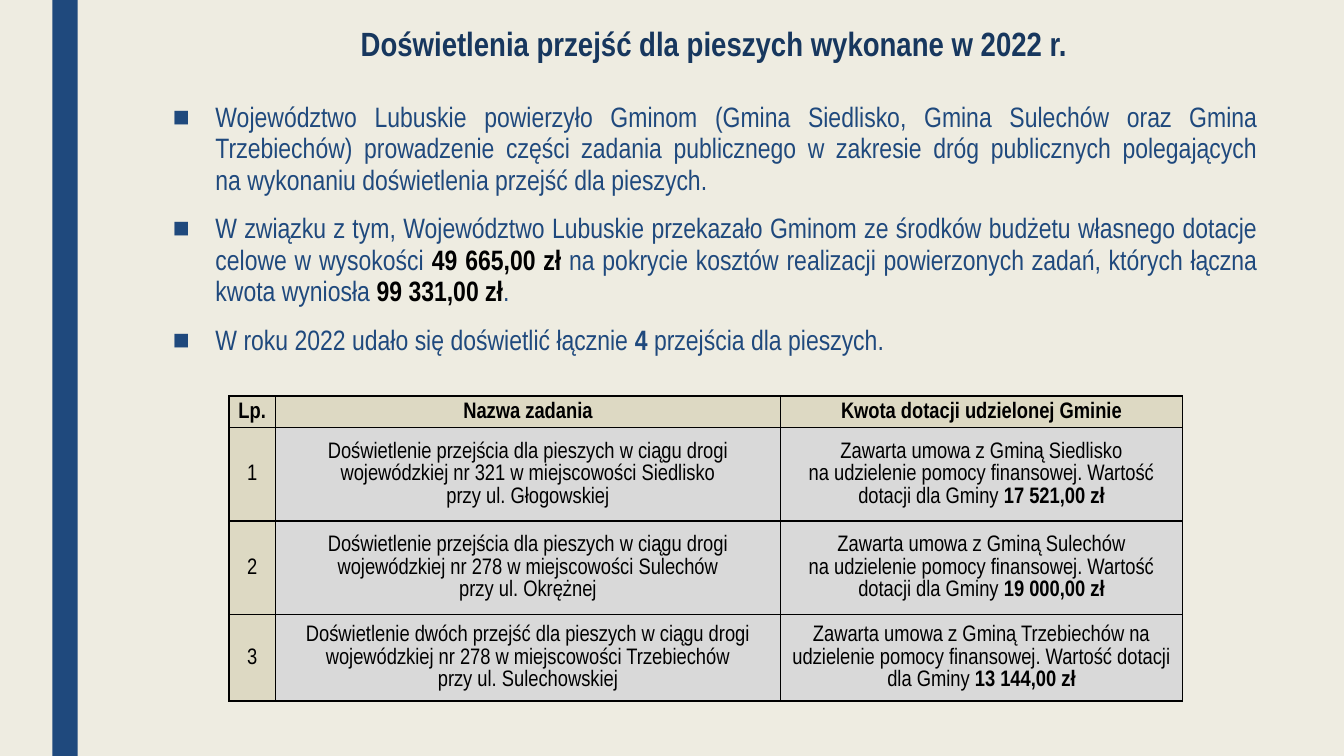
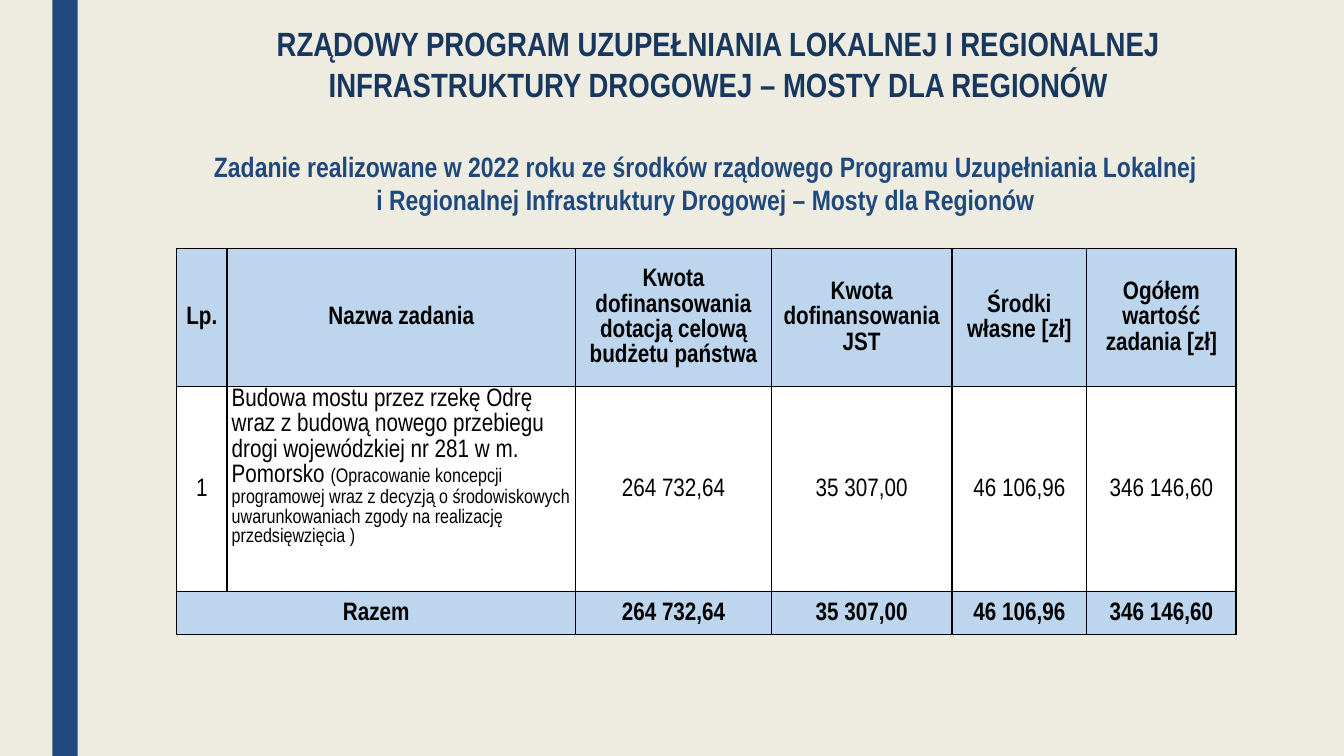
from lxml import etree
from pptx import Presentation
from pptx.dml.color import RGBColor
from pptx.enum.shapes import MSO_SHAPE
from pptx.enum.text import MSO_ANCHOR, PP_ALIGN
from pptx.oxml.ns import qn
from pptx.util import Cm, Pt

FONT = "Arial Narrow"
CREAM = RGBColor(0xEE, 0xEC, 0xE1)
BLUE = RGBColor(0x1F, 0x49, 0x7D)
NAVY = RGBColor(0x17, 0x37, 0x5E)
BLACK = RGBColor(0, 0, 0)
WHITE = RGBColor(0xFF, 0xFF, 0xFF)
TAN = RGBColor(0xDD, 0xD9, 0xC3)
GREY = RGBColor(0xD9, 0xD9, 0xD9)
LIGHT_BLUE = RGBColor(0xBD, 0xD6, 0xEE)

AMOUNT = {"bold": True, "color": BLACK}
STRONG = {"bold": True}
SMALL = {"size": 14}

BULLETS = [
    ["Województwo Lubuskie powierzyło Gminom (Gmina Siedlisko, Gmina Sulechów oraz "
     "Gmina Trzebiechów) prowadzenie części zadania publicznego w zakresie dróg "
     "publicznych polegających\nna wykonaniu doświetlenia przejść dla pieszych."],
    ["W związku z tym, Województwo Lubuskie przekazało Gminom ze środków budżetu "
     "własnego dotacje celowe w wysokości ", ("49 665,00 zł", AMOUNT),
     " na pokrycie kosztów realizacji powierzonych zadań, których łączna kwota wyniosła ",
     ("99 331,00 zł", AMOUNT), "."],
    ["W roku 2022 udało się doświetlić łącznie ", ("4", STRONG),
     " przejścia dla pieszych."],
]

CROSSINGS = [
    ["Lp.", "Nazwa zadania", "Kwota dotacji udzielonej Gminie"],
    ["1",
     "Doświetlenie przejścia dla pieszych w ciągu drogi wojewódzkiej nr 321 "
     "w miejscowości Siedlisko\nprzy ul. Głogowskiej",
     ["Zawarta umowa z Gminą Siedlisko\nna udzielenie pomocy finansowej. "
      "Wartość dotacji dla Gminy ", ("17 521,00 zł", STRONG)]],
    ["2",
     "Doświetlenie przejścia dla pieszych w ciągu drogi wojewódzkiej nr 278 "
     "w miejscowości Sulechów\nprzy ul. Okrężnej",
     ["Zawarta umowa z Gminą Sulechów\nna udzielenie pomocy finansowej. "
      "Wartość dotacji dla Gminy ", ("19 000,00 zł", STRONG)]],
    ["3",
     "Doświetlenie dwóch przejść dla pieszych w ciągu drogi wojewódzkiej nr 278 "
     "w miejscowości Trzebiechów\nprzy ul. Sulechowskiej",
     ["Zawarta umowa z Gminą Trzebiechów na udzielenie pomocy finansowej. "
      "Wartość dotacji dla Gminy ", ("13 144,00 zł", STRONG)]],
]

SUMS = ["264 732,64", "35 307,00", "46 106,96", "346 146,60"]
BRIDGES = [
    ["Lp.", "Nazwa zadania", "Kwota dofinansowania dotacją celową budżetu państwa",
     "Kwota dofinansowania JST", "Środki własne [zł]", "Ogółem wartość zadania [zł]"],
    ["1",
     ["Budowa mostu przez rzekę Odrę wraz z budową nowego przebiegu drogi "
      "wojewódzkiej nr 281 w m. Pomorsko ",
      ("(Opracowanie koncepcji programowej wraz z decyzją o środowiskowych "
       "uwarunkowaniach zgody na realizację przedsięwzięcia )", SMALL)],
     *SUMS],
    ["Razem", "", *SUMS],
]


def add_runs(p, parts, size, color, bold=False):
    """Fill p from strings and (string, overrides) pairs; a newline is a line break."""
    for part in [parts] if isinstance(parts, str) else parts:
        text, changes = (part, {}) if isinstance(part, str) else part
        style = {"size": size, "color": color, "bold": bold, **changes}
        for i, line in enumerate(text.split("\n")):
            if i:
                p.add_line_break()
            r = p.add_run()
            r.text = line
            r.font.name = FONT
            r.font.size = Pt(style["size"])
            r.font.bold = style["bold"]
            r.font.color.rgb = style["color"]


def set_up_layout(prs):
    """Give the title-only layout its background."""
    layout = prs.slide_layouts[5]
    layout.background.fill.solid()
    layout.background.fill.fore_color.rgb = CREAM
    return layout


def add_slide(prs, layout):
    """Add a slide; the first one also hands its side band to the layout."""
    slide = prs.slides.add_slide(layout)
    if len(prs.slides) == 1:
        band = slide.shapes.add_shape(MSO_SHAPE.RECTANGLE, Cm(1.32), 0,
                                      Cm(0.64), prs.slide_height)
        band.shadow.inherit = False
        band.fill.solid()
        band.fill.fore_color.rgb = BLUE
        band.line.fill.background()
        layout.shapes.element.insert(2, band.element)
    return slide


def set_title(slide, text, left, top, width, height, spacing=1.0):
    title = slide.shapes.title
    title.left, title.top, title.width, title.height = left, top, width, height
    tf = title.text_frame
    tf.word_wrap = True
    tf.vertical_anchor = MSO_ANCHOR.TOP
    p = tf.paragraphs[0]
    p.alignment = PP_ALIGN.CENTER
    p.line_spacing = spacing
    add_runs(p, text, 24, NAVY, bold=True)


def add_text_box(slide, left, top, width, height):
    tf = slide.shapes.add_textbox(left, top, width, height).text_frame
    tf.word_wrap = True
    return tf


def add_bullets(slide, items, left, top, width, height):
    tf = add_text_box(slide, left, top, width, height)
    for i, parts in enumerate(items):
        p = tf.add_paragraph() if i else tf.paragraphs[0]
        p.alignment = PP_ALIGN.JUSTIFY
        p.line_spacing = 0.94
        p.space_before = Pt(10 if i else 0)
        p.space_after = Pt(2)
        pPr = p._p.get_or_add_pPr()
        pPr.set("marL", str(Cm(1.07)))
        pPr.set("indent", str(-Cm(1.07)))
        etree.SubElement(pPr, qn("a:buFont"), typeface="Arial")
        etree.SubElement(pPr, qn("a:buChar"), char="■")
        add_runs(p, parts, 20, BLUE)


def add_borders(cell):
    """Draw a black 1 pt line on all four sides; call before the cell is filled."""
    tcPr = cell._tc.get_or_add_tcPr()
    for side in ("a:lnL", "a:lnR", "a:lnT", "a:lnB"):
        ln = etree.SubElement(tcPr, qn(side), w=str(Pt(1)))
        fill = etree.SubElement(ln, qn("a:solidFill"))
        etree.SubElement(fill, qn("a:srgbClr"), val=str(BLACK))


def add_table(slide, rows, left, top, widths, heights, size, fill_of, bold_rows):
    """Add a bordered table; fill_of(row, column) gives each cell's colour."""
    table = slide.shapes.add_table(len(rows), len(widths), left, top,
                                   Cm(sum(widths)), Cm(sum(heights))).table
    for column, width in zip(table.columns, widths):
        column.width = Cm(width)
    for row, height in zip(table.rows, heights):
        row.height = Cm(height)
    for i, row in enumerate(rows):
        for j, parts in enumerate(row):
            cell = table.cell(i, j)
            add_borders(cell)
            cell.fill.solid()
            cell.fill.fore_color.rgb = fill_of(i, j)
            cell.vertical_anchor = MSO_ANCHOR.MIDDLE
            cell.margin_left = cell.margin_right = Cm(0.12)
            cell.margin_top = cell.margin_bottom = 0
            p = cell.text_frame.paragraphs[0]
            p.alignment = PP_ALIGN.CENTER
            p.line_spacing = 1.07
            if parts:
                add_runs(p, parts, size, BLACK, bold=i in bold_rows)
    return table


def build_crossings(slide):
    set_title(slide, "Doświetlenia przejść dla pieszych wykonane w 2022 r.",
              Cm(5.6), Cm(0.58), Cm(24.77), Cm(1.47), spacing=0.89)
    add_bullets(slide, BULLETS, Cm(4.11), Cm(2.44), Cm(27.84), Cm(7.2))
    add_table(slide, CROSSINGS, Cm(5.77), Cm(9.98), [1.17, 12.73, 10.13],
              [0.79, 2.36, 2.36, 2.16], 16,
              lambda i, j: TAN if i == 0 or j == 0 else GREY, bold_rows={0})


def build_bridges(slide):
    set_title(slide, "RZĄDOWY PROGRAM UZUPEŁNIANIA LOKALNEJ I REGIONALNEJ "
              "INFRASTRUKTURY DROGOWEJ – MOSTY DLA REGIONÓW",
              Cm(6.58), Cm(0.46), Cm(23.04), Cm(2.21))
    tf = add_text_box(slide, Cm(4.98), Cm(3.63), Cm(25.6), Cm(1.96))
    tf.vertical_anchor = MSO_ANCHOR.MIDDLE
    p = tf.paragraphs[0]
    p.alignment = PP_ALIGN.CENTER
    add_runs(p, "Zadanie realizowane w 2022 roku ze środków rządowego Programu "
             "Uzupełniania Lokalnej\ni Regionalnej Infrastruktury Drogowej – "
             "Mosty dla Regionów", 20, BLUE, bold=True)
    table = add_table(slide, BRIDGES, Cm(4.45), Cm(6.27),
                      [1.27, 8.79, 4.93, 4.55, 3.4, 3.76], [3.47, 4.03, 1.09], 18,
                      lambda i, j: WHITE if i == 1 else LIGHT_BLUE, bold_rows={0, 2})
    task = table.cell(1, 1)
    task.vertical_anchor = MSO_ANCHOR.TOP
    task.text_frame.paragraphs[0].alignment = PP_ALIGN.LEFT
    table.cell(2, 0).merge(table.cell(2, 1))


def main():
    prs = Presentation()
    prs.slide_width, prs.slide_height = Cm(33.87), Cm(19.05)
    layout = set_up_layout(prs)
    for build in (build_crossings, build_bridges):
        build(add_slide(prs, layout))
    prs.save("out.pptx")


if __name__ == "__main__":
    main()
